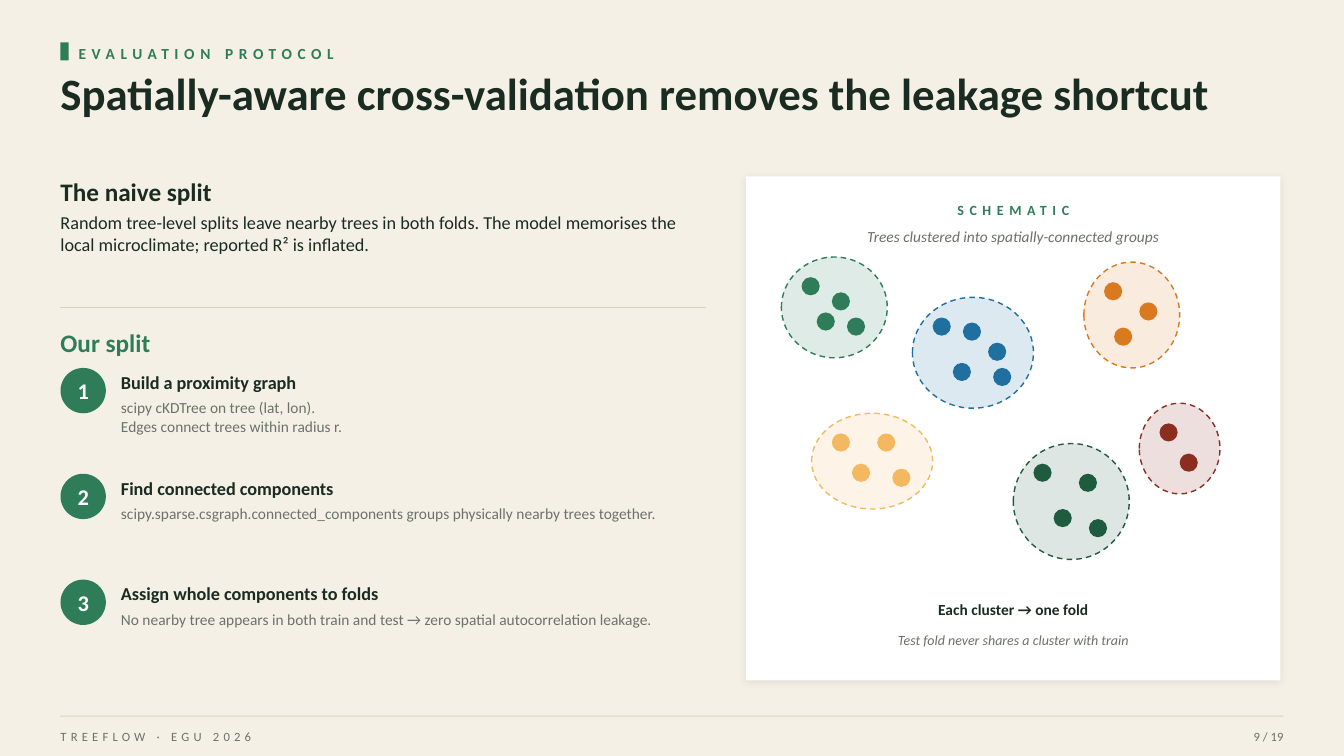
from lxml.etree import SubElement
from pptx import Presentation
from pptx.dml.color import RGBColor
from pptx.enum.dml import MSO_LINE
from pptx.enum.shapes import MSO_CONNECTOR, MSO_SHAPE
from pptx.enum.text import MSO_ANCHOR, MSO_AUTO_SIZE, PP_ALIGN
from pptx.oxml.ns import qn
from pptx.util import Pt

PX = 9144  # 100 px to the inch
FONT = "Calibri"

CREAM = RGBColor(0xF4, 0xF0, 0xE6)
INK = RGBColor(0x1A, 0x2B, 0x22)
GREEN = RGBColor(0x2E, 0x7D, 0x58)
GREY = RGBColor(0x6B, 0x72, 0x68)
RULE = RGBColor(0xD8, 0xD2, 0xC2)
WHITE = RGBColor(0xFF, 0xFF, 0xFF)
BLUE = RGBColor(0x1F, 0x6F, 0xA0)
ORANGE = RGBColor(0xD9, 0x7A, 0x1F)
AMBER = RGBColor(0xF4, 0xB8, 0x60)
FOREST = RGBColor(0x1F, 0x5B, 0x3F)
RUST = RGBColor(0x8B, 0x2E, 0x1F)

STEPS = [
    ("Build a proximity graph",
     ["scipy cKDTree on tree (lat, lon).", "Edges connect trees within radius r."]),
    ("Find connected components",
     ["scipy.sparse.csgraph.connected_components groups physically nearby trees together."]),
    ("Assign whole components to folds",
     ["No nearby tree appears in both train and test → zero spatial autocorrelation leakage."]),
]
STEP_PITCH = 105

# Tree positions, relative to the schematic card
CLUSTERS = [
    (GREEN, [(55, 100), (85, 115), (70, 135), (100, 140)]),
    (BLUE, [(185, 140), (215, 145), (240, 165), (205, 185), (245, 190)]),
    (ORANGE, [(355, 105), (390, 125), (365, 150)]),
    (AMBER, [(85, 255), (130, 255), (105, 285), (145, 290)]),
    (FOREST, [(285, 285), (330, 295), (305, 330), (340, 340)]),
    (RUST, [(410, 245), (430, 275)]),
]
TREE = 18
HALO_BEFORE, HALO_AFTER = 20, 40


def px(*lengths):
    return [length * PX for length in lengths]


def write(shape, lines, size, color, bold=False, italic=False, spacing=0,
          align=PP_ALIGN.LEFT, anchor=MSO_ANCHOR.MIDDLE):
    frame = shape.text_frame
    frame.word_wrap = True
    frame.auto_size = MSO_AUTO_SIZE.NONE
    frame.vertical_anchor = anchor
    frame.margin_left = frame.margin_right = frame.margin_top = frame.margin_bottom = 0
    for index, line in enumerate(lines):
        paragraph = frame.add_paragraph() if index else frame.paragraphs[0]
        paragraph.alignment = align
        run = paragraph.add_run()
        run.text = line
        font = run.font
        font.name, font.size, font.bold, font.italic = FONT, Pt(size), bold, italic
        font.color.rgb = color
        if spacing:
            font._element.set("spc", str(spacing * 100))


def add_text(slide, box, lines, size, color, **style):
    write(slide.shapes.add_textbox(*px(*box)), lines, size, color, **style)


def add_filled(slide, preset, box, color):
    shape = slide.shapes.add_shape(preset, *px(*box))
    shape.shadow.inherit = False
    shape.fill.solid()
    shape.fill.fore_color.rgb = color
    shape.line.fill.background()
    return shape


def set_alpha(color_element, percent):
    SubElement(color_element, qn("a:alpha")).set("val", str(percent * 1000))


def add_soft_shadow(shape):
    effects = shape._element.spPr.find(qn("a:effectLst"))
    shadow = SubElement(effects, qn("a:outerShdw"), blurRad=str(Pt(6)),
                        dist=str(Pt(1)), dir="5400000", algn="bl", rotWithShape="0")
    set_alpha(SubElement(shadow, qn("a:srgbClr"), val="000000"), 8)


def add_header(slide, left, top, width):
    add_filled(slide, MSO_SHAPE.RECTANGLE, (left, top + 2, 8, 18), GREEN)
    add_text(slide, (left + 18, top, 600, 25), ["EVALUATION PROTOCOL"], 11, GREEN,
             bold=True, spacing=4)
    title = slide.shapes.title
    title.left, title.top, title.width, title.height = px(left, top + 25, width, 85)
    write(title, ["Spatially-aware cross-validation removes the leakage shortcut"], 32, INK,
          bold=True, anchor=MSO_ANCHOR.TOP)


def add_naive_split(slide, left, top, width):
    add_text(slide, (left, top, width, 40), ["The naive split"], 18, INK, bold=True)
    add_text(slide, (left, top + 40, width, 85),
             ["Random tree-level splits leave nearby trees in both folds. The model memorises "
              "the local microclimate; reported R² is inflated."],
             13, INK, anchor=MSO_ANCHOR.TOP)


def add_divider(slide, left, top, width):
    divider = slide.shapes.add_connector(MSO_CONNECTOR.STRAIGHT,
                                         *px(left, top, left + width, top))
    divider.line.color.rgb = RULE
    divider.line.width = Pt(1)
    SubElement(divider._element.spPr, qn("a:effectLst"))


def add_step(slide, left, top, width, number, heading, details):
    badge = add_filled(slide, MSO_SHAPE.OVAL, (left, top, 45, 45), GREEN)
    write(badge, [str(number)], 16, WHITE, bold=True, align=PP_ALIGN.CENTER)
    indent = 60
    add_text(slide, (left + indent, top - 2, width - indent, 32), [heading], 13, INK, bold=True)
    add_text(slide, (left + indent, top + 30, width - indent, 65), details, 11, GREY,
             anchor=MSO_ANCHOR.TOP)


def add_our_split(slide, left, top, width):
    add_text(slide, (left, top, width, 40), ["Our split"], 18, GREEN, bold=True)
    for index, (heading, details) in enumerate(STEPS):
        add_step(slide, left, top + 45 + index * STEP_PITCH, width, index + 1, heading, details)


def add_cluster(slide, left, top, color, trees):
    """Draw the trees and a dashed halo that encloses them."""
    for x, y in trees:
        add_filled(slide, MSO_SHAPE.OVAL, (left + x, top + y, TREE, TREE), color)
    xs, ys = zip(*trees)
    margin = HALO_BEFORE + HALO_AFTER
    halo = add_filled(slide, MSO_SHAPE.OVAL,
                      (left + min(xs) - HALO_BEFORE, top + min(ys) - HALO_BEFORE,
                       max(xs) - min(xs) + margin, max(ys) - min(ys) + margin), color)
    set_alpha(halo._element.spPr.find(qn("a:solidFill"))[0], 15)
    halo.line.color.rgb = color
    halo.line.width = Pt(1)
    halo.line.dash_style = MSO_LINE.DASH


def add_schematic(slide, left, top, width, height):
    card = add_filled(slide, MSO_SHAPE.RECTANGLE, (left, top, width, height), WHITE)
    add_soft_shadow(card)
    captions = [
        (18, "SCHEMATIC", 10, GREEN, {"bold": True, "spacing": 4}),
        (45, "Trees clustered into spatially-connected groups", 11, GREY, {"italic": True}),
        (415, "Each cluster → one fold", 11, INK, {"bold": True}),
        (445, "Test fold never shares a cluster with train", 10, GREY, {"italic": True}),
    ]
    for offset, caption, size, color, style in captions:
        add_text(slide, (left, top + offset, width, 30), [caption], size, color,
                 align=PP_ALIGN.CENTER, **style)
    for color, trees in CLUSTERS:
        add_cluster(slide, left, top, color, trees)


def add_footer(slide, left, top, width):
    add_filled(slide, MSO_SHAPE.RECTANGLE, (left, top, width, 1), RULE)
    add_text(slide, (left, top + 8, 600, 25), ["TREEFLOW · EGU 2026"], 9, GREY, spacing=3)
    add_text(slide, (left + width - 160, top + 8, 160, 25), ["9 / 19"], 9, GREY,
             align=PP_ALIGN.RIGHT)


def main():
    deck = Presentation()
    deck.slide_width, deck.slide_height = px(1333, 750)
    title_only = deck.slide_layouts[5]
    slide = deck.slides.add_slide(title_only)
    slide.background.fill.solid()
    slide.background.fill.fore_color.rgb = CREAM

    margin, column = 60, 640
    add_header(slide, margin, 40, 1200)
    add_naive_split(slide, margin, 170, column)
    add_divider(slide, margin, 305, column)
    add_our_split(slide, margin, 320, column)
    add_schematic(slide, 740, 175, 530, 500)
    add_footer(slide, margin, 710, 1213)
    deck.save("out.pptx")


if __name__ == "__main__":
    main()
